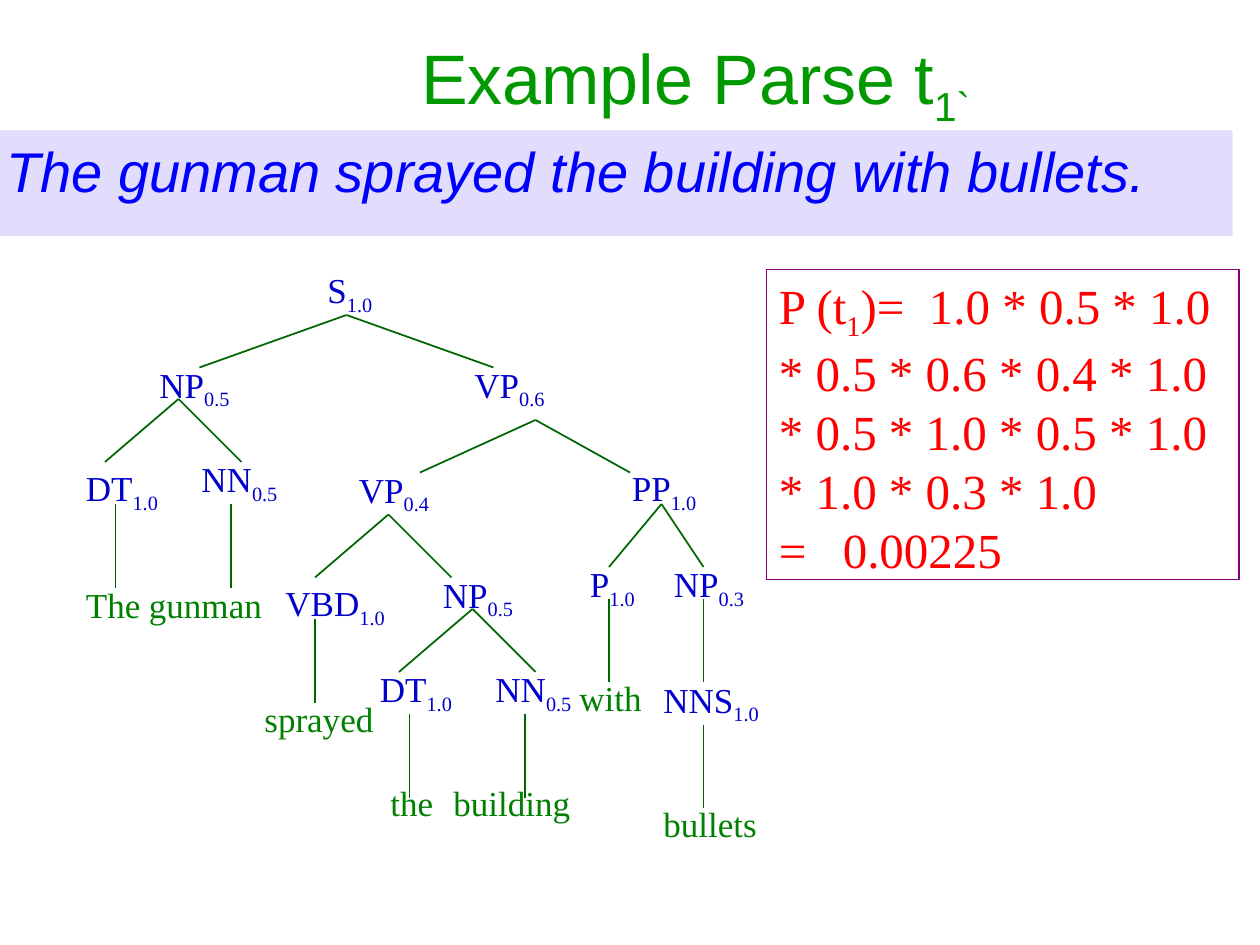
import pptx
import pptx.dml.color
import pptx.enum.shapes
import pptx.enum.text
import pptx.oxml.ns
import pptx.util
import lxml.etree

Pt = pptx.util.Pt

THEME = {
    "sans": "Arial", "serif": "Times New Roman",
    "title": "009900", "sentence": "0000FF", "band": "E2DDFD",
    "category": "0000CC", "word": "008000", "edge": "006600",
    "formula": "FF0000", "frame": "800080",
    "title_size": 40, "sentence_size": 32, "formula_size": 28, "node_size": 20,
    "branch_width": 1, "stem_width": 0.75,
}

TITLE = [("Example Parse t", False), ("1`", True)]
SENTENCE = [("The gunman sprayed the building with bullets.", False)]
FORMULA = [
    ("P (t", False), ("1", True),
    (")=  1.0 * 0.5 * 1.0 * 0.5 * 0.6 * 0.4 * 1.0"
     " * 0.5 * 1.0 * 0.5 * 1.0 * 1.0 * 0.3 * 1.0", False),
]
RESULT = [("=\t0.00225", False)]

# category, probability, left, top, width
CATEGORIES = [
    ("S", "1.0", 180, 150, 54),
    ("NP", "0.5", 84, 204, 66),
    ("VP", "0.6", 264, 204, 72),
    ("DT", "1.0", 42, 263, 72),
    ("NN", "0.5", 108, 258, 66),
    ("VP", "0.4", 198, 264, 72),
    ("PP", "1.0", 354, 263, 72),
    ("VBD", "1.0", 156, 329, 90),
    ("NP", "0.5", 246, 324, 72),
    ("P", "1.0", 330, 318, 54),
    ("NP", "0.3", 378, 318, 66),
    ("DT", "1.0", 210, 378, 66),
    ("NN", "0.5", 276, 378, 72),
    ("NNS", "1.0", 372, 384, 72),
]
# word, left, top, width
WORDS = [
    ("The", 42, 330, 54), ("gunman", 78, 330, 96), ("sprayed", 144, 395, 96),
    ("the", 216, 443, 42), ("building", 252, 443, 84),
    ("with", 324, 383, 72), ("bullets", 372, 455, 72),
]
# apex x, apex y, left child x, right child x, drop
BRANCHES = [
    (198, 180, 114, 282, 30), (306, 240, 240, 360, 30),
    (102, 228, 60, 138, 36), (222, 294, 180, 258, 36),
    (378, 288, 348, 402, 36), (270, 348, 228, 306, 36),
]
STEMS = [(66, 288), (132, 288), (180, 354), (234, 408), (300, 408),
         (348, 342), (402, 342), (402, 414)]
STEM_LENGTH = 48
NODE_HEIGHT = 31


def color(name):
    return pptx.dml.color.RGBColor.from_string(THEME[name])


def add_runs(paragraph, runs, font, size, ink, italic=False):
    for text, subscript in runs:
        run = paragraph.add_run()
        run.text = text
        run.font.name = THEME[font]
        run.font.size = Pt(THEME[size])
        run.font.color.rgb = color(ink)
        run.font.italic = italic
        if subscript:
            run._r.get_or_add_rPr().set("baseline", "-25000")


def add_node(slide, runs, left, top, width, ink):
    shape = slide.shapes.add_textbox(Pt(left), Pt(top), Pt(width), Pt(NODE_HEIGHT))
    shape.text_frame.word_wrap = True
    add_runs(shape.text_frame.paragraphs[0], runs, "serif", "node_size", ink)


def add_box(slide, left, top, width, height):
    shape = slide.shapes.add_shape(
        pptx.enum.shapes.MSO_SHAPE.RECTANGLE, Pt(left), Pt(top), Pt(width), Pt(height))
    shape.shadow.inherit = False
    shape.text_frame.word_wrap = True
    shape.text_frame.vertical_anchor = pptx.enum.text.MSO_ANCHOR.TOP
    shape.text_frame.paragraphs[0].alignment = pptx.enum.text.PP_ALIGN.LEFT
    return shape


def add_edge(slide, x1, y1, x2, y2, width):
    edge = slide.shapes.add_connector(
        pptx.enum.shapes.MSO_CONNECTOR.STRAIGHT, Pt(x1), Pt(y1), Pt(x2), Pt(y2))
    edge.line.color.rgb = color("edge")
    edge.line.width = Pt(THEME[width])
    lxml.etree.SubElement(edge._element.spPr, pptx.oxml.ns.qn("a:effectLst"))


def add_heading(slide):
    title = slide.shapes.title
    title.left, title.top, title.width, title.height = Pt(91), Pt(16.5), Pt(613), Pt(61)
    title.text_frame.vertical_anchor = pptx.enum.text.MSO_ANCHOR.MIDDLE
    paragraph = title.text_frame.paragraphs[0]
    paragraph.alignment = pptx.enum.text.PP_ALIGN.CENTER
    add_runs(paragraph, TITLE, "sans", "title_size", "title")

    band = add_box(slide, -3.6, 74.5, 708, 60.5)
    band.fill.solid()
    band.fill.fore_color.rgb = color("band")
    band.line.fill.background()
    paragraph = band.text_frame.paragraphs[0]
    paragraph.space_before = Pt(7.2)
    add_runs(paragraph, SENTENCE, "sans", "sentence_size", "sentence", italic=True)


def add_formula(slide):
    frame = add_box(slide, 438, 154, 270, 177)
    frame.fill.background()
    frame.line.color.rgb = color("frame")
    frame.line.width = Pt(THEME["stem_width"])
    add_runs(frame.text_frame.paragraphs[0], FORMULA, "serif", "formula_size", "formula")
    result = frame.text_frame.add_paragraph()
    result.alignment = pptx.enum.text.PP_ALIGN.LEFT
    tabs = lxml.etree.SubElement(result._p.get_or_add_pPr(), pptx.oxml.ns.qn("a:tabLst"))
    lxml.etree.SubElement(tabs, pptx.oxml.ns.qn("a:tab"), pos=str(Pt(36.5)), algn="l")
    add_runs(result, RESULT, "serif", "formula_size", "formula")


def add_tree(slide):
    for category, probability, left, top, width in CATEGORIES:
        add_node(slide, [(category, False), (probability, True)], left, top, width, "category")
    for word, left, top, width in WORDS:
        add_node(slide, [(word, False)], left, top, width, "word")
    for x, y, left_child, right_child, drop in BRANCHES:
        for child in (left_child, right_child):
            add_edge(slide, x, y, child, y + drop, "branch_width")
    for x, y in STEMS:
        add_edge(slide, x, y, x, y + STEM_LENGTH, "stem_width")


def main():
    presentation = pptx.Presentation()
    presentation.slide_width, presentation.slide_height = Pt(720), Pt(540)
    slide = presentation.slides.add_slide(presentation.slide_layouts[5])
    add_heading(slide)
    add_tree(slide)
    add_formula(slide)
    presentation.save("out.pptx")


if __name__ == "__main__":
    main()
